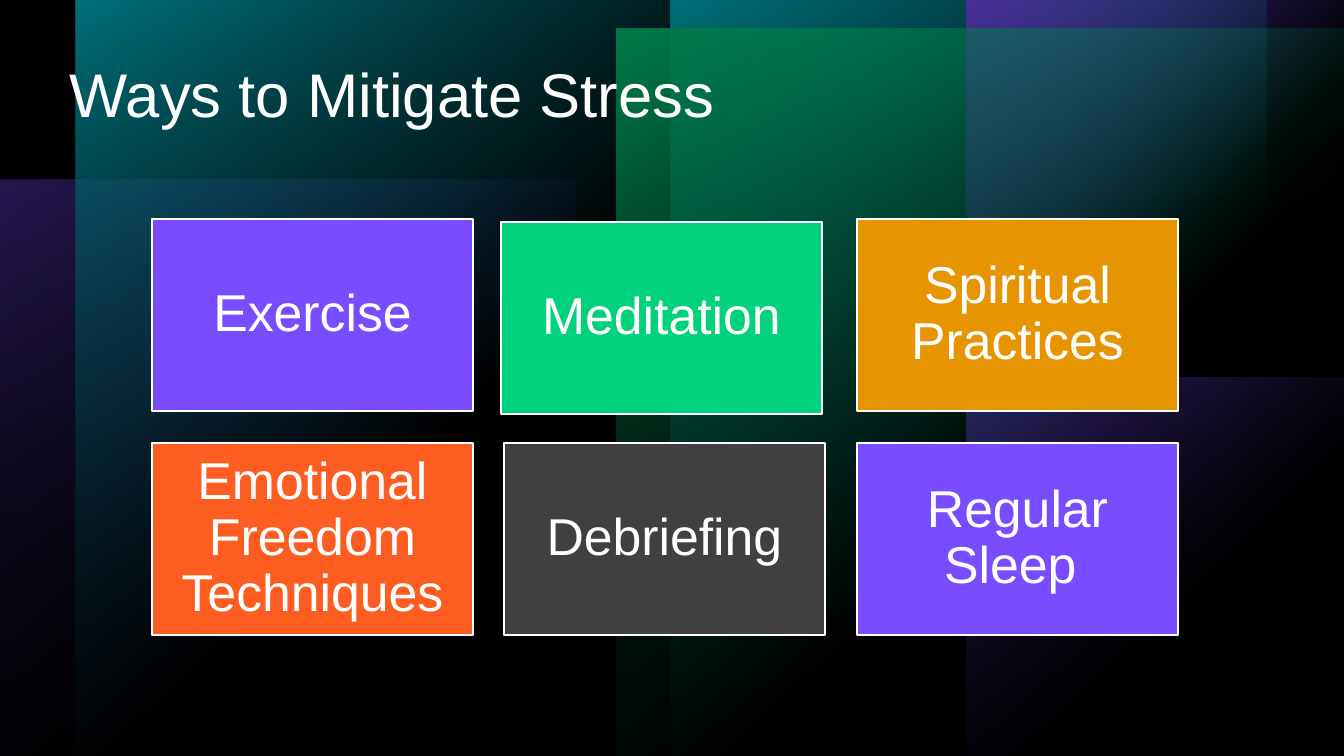
"""Build a slide with six coloured cards of ways to mitigate stress."""
from dataclasses import dataclass

from pptx import Presentation
from pptx import util as u
from pptx.dml.color import RGBColor
from pptx.enum import shapes, text
from pptx.oxml import parse_xml
from pptx.oxml.ns import nsdecls
from pptx.shapes.autoshape import Shape
from pptx.slide import Slide
from pptx.text.text import TextFrame

WIDTH, HEIGHT = 1344, 756
EMU_PER_PX = 12192000 / WIDTH
COLORS = {
    "black": "000000",
    "white": "FFFFFF",
    "purple": "794DFF",
    "green": "00D17D",
    "teal": "00BAC8",
    "amber": "E69500",
    "orange": "FE5D21",
    "gray": "404040",
}
CORNER_GLOW = '<a:path path="circle"><a:fillToRect r="100000" b="100000"/></a:path>'
DOWNWARD = '<a:lin ang="5400000" scaled="0"/>'


@dataclass(frozen=True)
class Box:
    left: int
    top: int
    width: int
    height: int


@dataclass(frozen=True)
class Stop:
    position: int
    opacity: int


@dataclass(frozen=True)
class Panel:
    box: Box
    color: str
    opacity: int = 100


@dataclass(frozen=True)
class Card:
    label: str
    color: str
    left: int
    top: int


CARD_WIDTH, CARD_HEIGHT, CARD_INSET = 321, 192, 15
LEFT, MIDDLE, RIGHT = 152, 504, 857
UPPER, LOWER = 219, 443

PANELS = [
    Panel(Box(0, 180, 576, 576), "purple", 60),
    Panel(Box(671, 0, 596, HEIGHT), "teal"),
    Panel(Box(76, 0, 595, HEIGHT), "teal"),
    Panel(Box(966, 378, 378, 378), "purple"),
    Panel(Box(966, 0, 378, 378), "purple"),
    Panel(Box(617, 29, 727, 727), "green"),
]
CARDS = [
    Card("Exercise", "purple", LEFT, UPPER),
    Card("Meditation", "green", MIDDLE - 3, UPPER + 3),
    Card("Spiritual Practices", "amber", RIGHT, UPPER),
    Card("Emotional Freedom Techniques", "orange", LEFT, LOWER),
    Card("Debriefing", "gray", MIDDLE, LOWER),
    Card("Regular Sleep ", "purple", RIGHT, LOWER),
]


def px(length: int) -> u.Emu:
    return u.Emu(round(length * EMU_PER_PX))


def color(name: str) -> RGBColor:
    return RGBColor.from_string(COLORS[name])


def place(box: Box) -> tuple[u.Emu, u.Emu, u.Emu, u.Emu]:
    return px(box.left), px(box.top), px(box.width), px(box.height)


def add_rectangle(slide: Slide, box: Box) -> Shape:
    shape = slide.shapes.add_shape(shapes.MSO_SHAPE.RECTANGLE, *place(box))
    shape.shadow.inherit = False
    return shape


def add_gradient(slide: Slide, box: Box, name: str, stops: list[Stop], direction: str) -> None:
    shape = add_rectangle(slide, box)
    shape.line.fill.background()
    stop_list = "".join(
        f'<a:gs pos="{stop.position * 1000}"><a:srgbClr val="{COLORS[name]}">'
        f'<a:alpha val="{stop.opacity * 1000}"/></a:srgbClr></a:gs>'
        for stop in stops
    )
    gradient = parse_xml(
        f'<a:gradFill {nsdecls("a")} rotWithShape="1">'
        f"<a:gsLst>{stop_list}</a:gsLst>{direction}</a:gradFill>"
    )
    shape.element.spPr.prstGeom.addnext(gradient)


def write(frame: TextFrame, words: str, size: int, alignment: text.PP_ALIGN) -> None:
    frame.word_wrap = True
    paragraph = frame.paragraphs[0]
    paragraph.text = words
    paragraph.alignment = alignment
    paragraph.line_spacing = 0.9
    paragraph.font.name = "Arial"
    paragraph.font.size = u.Pt(size)
    paragraph.font.color.rgb = color("white")


def add_card(slide: Slide, card: Card) -> None:
    shape = add_rectangle(slide, Box(card.left, card.top, CARD_WIDTH, CARD_HEIGHT))
    shape.fill.solid()
    shape.fill.fore_color.rgb = color(card.color)
    shape.line.color.rgb = color("white")
    shape.line.width = u.Pt(1)
    frame = shape.text_frame
    frame.margin_left = frame.margin_right = px(CARD_INSET)
    frame.margin_top = frame.margin_bottom = px(CARD_INSET)
    frame.vertical_anchor = text.MSO_ANCHOR.MIDDLE
    write(frame, card.label, 37, text.PP_ALIGN.CENTER)


def main() -> None:
    presentation = Presentation()
    presentation.slide_width, presentation.slide_height = px(WIDTH), px(HEIGHT)
    slide = presentation.slides.add_slide(presentation.slide_layouts[6])
    slide.background.fill.solid()
    slide.background.fill.fore_color.rgb = color("black")
    for panel in PANELS:
        stops = [Stop(0, panel.opacity), Stop(60, 0)]
        add_gradient(slide, panel.box, panel.color, stops, CORNER_GLOW)
    shade = [Stop(0, 40), Stop(100, 80)]
    add_gradient(slide, Box(0, 0, WIDTH, HEIGHT), "black", shade, DOWNWARD)
    title = slide.shapes.add_textbox(*place(Box(60, 59, 1221, 108)))
    write(title.text_frame, "Ways to Mitigate Stress", 44, text.PP_ALIGN.LEFT)
    for card in CARDS:
        add_card(slide, card)
    presentation.save("out.pptx")


if __name__ == "__main__":
    main()
